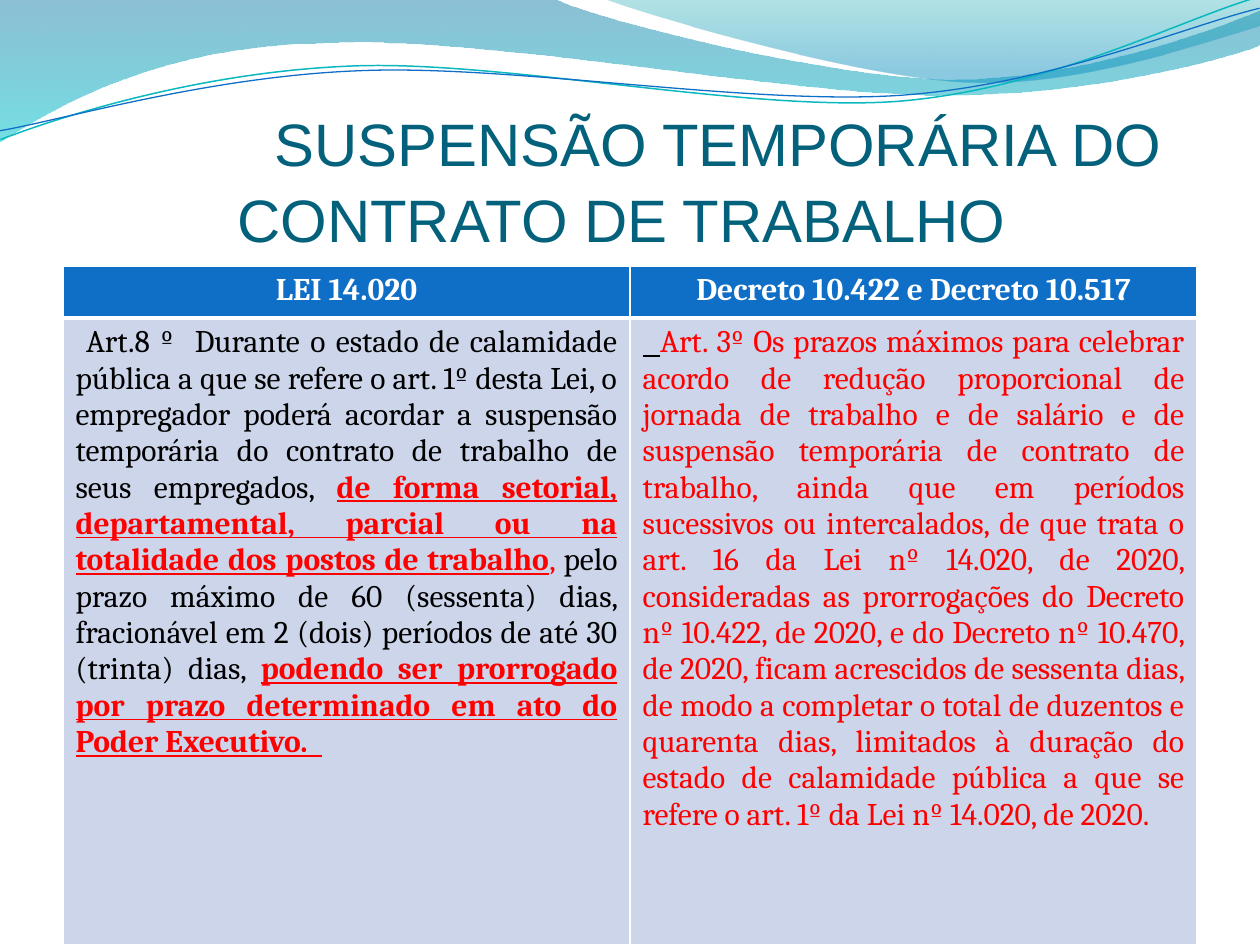
from dataclasses import dataclass
from typing import Optional

from lxml import etree
from pptx import Presentation, util as u
from pptx.dml.color import RGBColor
from pptx.enum import text
from pptx.oxml.ns import qn

PX = 914400 / 126
COLORS = {
    "title": "04617B", "header": "0F6FC6", "body": "CCD5EA",
    "white": "FFFFFF", "black": "000000", "red": "FF0000",
    "deep": "0074A1", "aqua": "00C6CF", "teal": "00A1A9", "sky": "008BBF",
    "line_teal": "0AB8BF", "line_blue": "0F6FC6",
}
Point = tuple[int, int]


@dataclass
class Stop:
    position: float
    color: str
    opacity: int


@dataclass
class Wave:
    """Segments hold one point for a line and three for a Bezier curve."""
    start: Point
    segments: list[tuple[Point, ...]]
    stops: Optional[tuple[Stop, Stop]] = None
    line: Optional[str] = None
    width: float = 0
    rotation: float = 0


@dataclass
class Run:
    text: str
    color: str = "black"
    bold: bool = False
    underline: bool = False


@dataclass
class Cell:
    runs: list[Run]
    fill: str
    align: text.PP_ALIGN
    bottom: int = 1


WAVES = [
    Wave((0, 0), [
        ((554, -1),),
        ((600, 21), (837, 79), (955, 79)),
        ((1075, 79), (1207, 33), (1260, 11)),
        ((1261, 45),),
        ((1239, 55), (1096, 96), (940, 95)),
        ((784, 95), (481, 35), (324, 43)),
        ((163, 45), (58, 105), (-1, 142)),
    ], stops=(Stop(0, "deep", 45), Stop(1, "aqua", 55))),
    Wave((604, -1), [
        ((641, 14), (859, 78), (969, 82)),
        ((1079, 87), (1211, 40), (1260, 26)),
        ((1260, 0),),
    ], stops=(Stop(0, "teal", 30), Stop(0.8, "sky", 45))),
    Wave((-2, 110), [
        ((58, 90), (199, 52), (350, 53)),
        ((499, 53), (745, 118), (896, 114)),
        ((1048, 109), (1184, 45), (1260, 27)),
    ], line="line_teal", width=0.85, rotation=357.3),
    Wave((-2, 101), [
        ((57, 94), (207, 57), (357, 58)),
        ((509, 58), (750, 112), (902, 108)),
        ((1052, 104), (1188, 52), (1262, 38)),
    ], line="line_blue", width=0.75, rotation=357.3),
]

LAW = [
    Run(" Art.8 º  Durante o estado de calamidade pública a que se refere o art. 1º desta Lei, "
        "o empregador poderá acordar a suspensão temporária do contrato de trabalho de seus "
        "empregados, "),
    Run("de forma setorial, departamental, parcial ou na totalidade dos postos de trabalho",
        "red", True, True),
    Run(", ", "red"),
    Run("pelo prazo máximo de 60 (sessenta) dias, fracionável em 2 (dois) períodos de até 30 "
        "(trinta) dias, "),
    Run("podendo ser prorrogado por prazo determinado em ato do Poder Executivo.  ",
        "red", True, True),
]
DECREE = [
    Run("  ", underline=True),
    Run("Art. 3º Os prazos máximos para celebrar acordo de redução proporcional de jornada de "
        "trabalho e de salário e de suspensão temporária de contrato de trabalho, ainda que em "
        "períodos sucessivos ou intercalados, de que trata o art. 16 da Lei nº 14.020, de 2020, "
        "consideradas as prorrogações do Decreto nº 10.422, de 2020, e do Decreto nº 10.470, de "
        "2020, ficam acrescidos de sessenta dias, de modo a completar o total de duzentos e "
        "quarenta dias, limitados à duração do estado de calamidade pública a que se refere o "
        "art. 1º da Lei nº 14.020, de 2020.", "red"),
]
HEADERS = ["LEI 14.020", "Decreto 10.422 e Decreto 10.517"]
ROWS = [
    [Cell([Run(h, "white", True)], "header", text.PP_ALIGN.CENTER, 3) for h in HEADERS],
    [Cell(runs, "body", text.PP_ALIGN.JUSTIFY) for runs in (LAW, DECREE)],
]


def px(n: float) -> u.Emu:
    return u.Emu(round(n * PX))


def rgb(name: str) -> RGBColor:
    return RGBColor.from_string(COLORS[name])


def bend(sp, segments: list[tuple[Point, ...]]) -> None:
    """Join each three line steps of a curved segment into one Bezier."""
    steps = iter(list(sp._element.iter(qn("a:lnTo"))))
    for seg in segments:
        parts = [next(steps) for _ in seg]
        if len(parts) == 3:
            curve = etree.Element(qn("a:cubicBezTo"))
            parts[0].addprevious(curve)
            for part in parts:
                curve.append(part[0])
                part.getparent().remove(part)


def draw_wave(s, wave: Wave) -> None:
    builder = s.shapes.build_freeform(*map(px, wave.start))
    points = [(px(x), px(y)) for seg in wave.segments for x, y in seg]
    builder.add_line_segments(points, close=wave.stops is not None)
    sp = builder.convert_to_shape()
    bend(sp, wave.segments)
    sp.rotation = wave.rotation
    sp.shadow.inherit = False
    if wave.stops is None:
        sp.fill.background()
        sp.line.color.rgb = rgb(wave.line)
        sp.line.width = u.Pt(wave.width)
        return
    sp.line.fill.background()
    sp.fill.gradient()
    sp.fill.gradient_angle = 270
    for target, stop in zip(sp.fill.gradient_stops, wave.stops):
        target.position = stop.position
        target.color.rgb = rgb(stop.color)
    for color, stop in zip(sp._element.spPr.iter(qn("a:srgbClr")), wave.stops):
        etree.SubElement(color, qn("a:alpha"), val=str(stop.opacity * 1000))


def draw_title(s) -> None:
    tf = s.shapes.add_textbox(px(63), px(97), px(1134), px(158)).text_frame
    tf.word_wrap = True
    tf.vertical_anchor = text.MSO_ANCHOR.BOTTOM
    tf.margin_left, tf.margin_right, tf.margin_bottom = 0, px(17), px(1)
    p = tf.paragraphs[0]
    p.text = "SUSPENSÃO TEMPORÁRIA DO CONTRATO DE TRABALHO"
    p.alignment = text.PP_ALIGN.CENTER
    p.line_spacing = 1.05
    p._p.get_or_add_pPr().set("indent", str(px(193)))
    font = p.runs[0].font
    font.name, font.size, font.color.rgb = "Arial", u.Pt(34.2), rgb("title")


def set_borders(cell, bottom: int) -> None:
    tc_pr = cell._tc.get_or_add_tcPr()
    widths = {"lnL": 1, "lnR": 1, "lnT": 1, "lnB": bottom}
    for i, (tag, width) in enumerate(widths.items()):
        ln = etree.Element(qn(f"a:{tag}"), w=str(u.Pt(width)))
        fill = etree.SubElement(ln, qn("a:solidFill"))
        etree.SubElement(fill, qn("a:srgbClr"), val=COLORS["white"])
        tc_pr.insert(i, ln)


def fill_cell(cell, content: Cell) -> None:
    cell.fill.solid()
    cell.fill.fore_color.rgb = rgb(content.fill)
    set_borders(cell, content.bottom)
    p = cell.text_frame.paragraphs[0]
    p.alignment = content.align
    for run in content.runs:
        r = p.add_run()
        r.text = run.text
        r.font.name, r.font.size = "Cambria", u.Pt(18)
        r.font.bold, r.font.underline = run.bold, run.underline
        r.font.color.rgb = rgb(run.color)


def draw_table(s) -> None:
    heights = (52, 627)
    table = s.shapes.add_table(2, 2, px(63), px(266), px(1134), px(sum(heights))).table
    for row, height, contents in zip(table.rows, heights, ROWS):
        row.height = px(height)
        for cell, content in zip(row.cells, contents):
            fill_cell(cell, content)


def main() -> None:
    prs = Presentation()
    prs.slide_width, prs.slide_height = px(1260), px(945)
    s = prs.slides.add_slide(prs.slide_layouts[6])
    for wave in WAVES:
        draw_wave(s, wave)
    draw_title(s)
    draw_table(s)
    prs.save("out.pptx")


if __name__ == "__main__":
    main()
